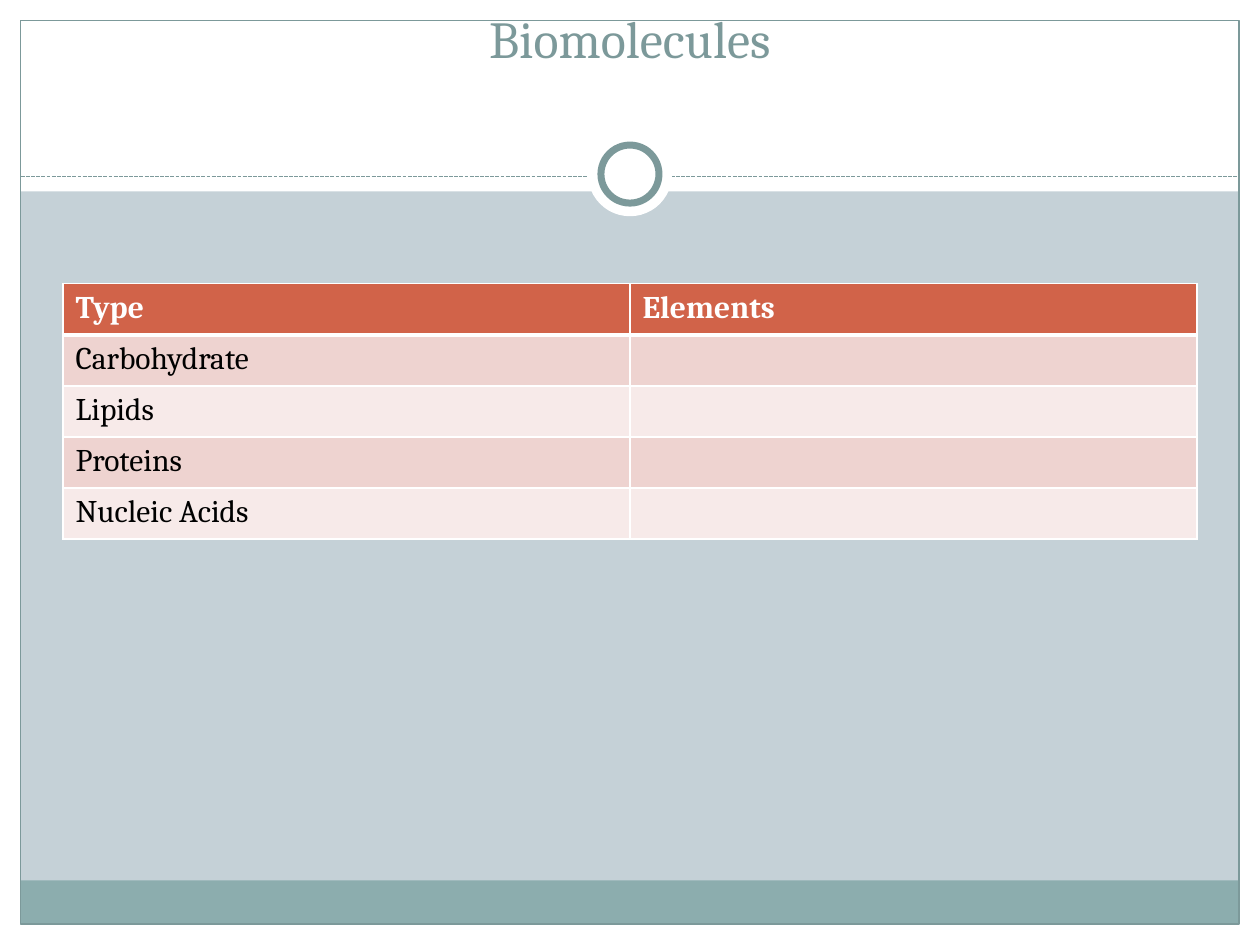
from lxml import etree
from pptx import Presentation
from pptx import util as u
from pptx.dml.color import RGBColor
from pptx.enum import dml, shapes, text
from pptx.oxml.ns import qn

WIDTH, HEIGHT = 25.4, 19.05
MARGIN = 0.42
HEADER_HEIGHT = 3.86
RULE_Y = 3.56
WHITE, TEAL, ACCENT = "FFFFFF", "7C999A", "D16349"
BANDS = ("EED3D0", "F7EAE9")
ROWS = [
    ("Type", "Elements"),
    ("Carbohydrate", ""),
    ("Lipids", ""),
    ("Proteins", ""),
    ("Nucleic Acids", ""),
]


def color(value):
    return RGBColor.from_string(value)


class SlideBuilder:
    font_name = "Cambria"
    title_size = 29.7
    table_size = 18

    def __init__(self, slide):
        self.slide = slide

    def background(self, fill):
        self.slide.background.fill.solid()
        self.slide.background.fill.fore_color.rgb = color(fill)

    def shape(self, kind, left, top, width, height, fill=None, line=None, weight=0.75):
        box = self.slide.shapes.add_shape(
            kind, u.Cm(left), u.Cm(top), u.Cm(width), u.Cm(height))
        box.shadow.inherit = False
        if fill:
            box.fill.solid()
            box.fill.fore_color.rgb = color(fill)
        else:
            box.fill.background()
        if line:
            box.line.color.rgb = color(line)
            box.line.width = u.Pt(weight)
        else:
            box.line.fill.background()
        return box

    def rectangle(self, *place, **style):
        return self.shape(shapes.MSO_SHAPE.RECTANGLE, *place, **style)

    def circle(self, center_x, center_y, diameter, **style):
        return self.shape(
            shapes.MSO_SHAPE.OVAL, center_x - diameter / 2, center_y - diameter / 2,
            diameter, diameter, **style)

    def dashed_rule(self, left, right, y):
        rule = self.slide.shapes.add_connector(
            shapes.MSO_CONNECTOR.STRAIGHT, u.Cm(left), u.Cm(y), u.Cm(right), u.Cm(y))
        rule.line.color.rgb = color(TEAL)
        rule.line.width = u.Pt(0.75)
        rule.line.dash_style = dml.MSO_LINE.SQUARE_DOT
        etree.SubElement(rule.element.spPr, qn("a:effectLst"))

    def style(self, paragraph, size, fill, bold=False):
        font = paragraph.font
        font.name, font.size, font.bold = self.font_name, u.Pt(size), bold
        font.color.rgb = color(fill)

    def title(self, words, left, top, width, height):
        title = self.slide.shapes.title
        title.left, title.top = u.Cm(left), u.Cm(top)
        title.width, title.height = u.Cm(width), u.Cm(height)
        frame = title.text_frame
        frame.text = words
        frame.word_wrap = True
        frame.auto_size = text.MSO_AUTO_SIZE.NONE
        frame.vertical_anchor = text.MSO_ANCHOR.BOTTOM
        frame.margin_bottom = u.Cm(1.35)
        para = frame.paragraphs[0]
        para.alignment = text.PP_ALIGN.CENTER
        self.style(para, self.title_size, TEAL)
        # Bring the title in front of the white header band.
        title.element.getparent().append(title.element)

    def border(self, cell, **weights):
        """Draw white cell borders; weights are points by side: L, R, T, B."""
        properties = cell._tc.get_or_add_tcPr()
        for side, weight in weights.items():
            line = etree.SubElement(
                properties, qn(f"a:ln{side}"), w=str(u.Pt(weight)))
            fill = etree.SubElement(line, qn("a:solidFill"))
            etree.SubElement(fill, qn("a:srgbClr"), val=WHITE)

    def table(self, rows, left, top, width, row_height):
        table = self.slide.shapes.add_table(
            len(rows), len(rows[0]), u.Cm(left), u.Cm(top),
            u.Cm(width), u.Cm(row_height * len(rows))).table
        for r, row in enumerate(rows):
            header = r == 0
            for c, words in enumerate(row):
                cell = table.cell(r, c)
                self.border(cell, L=1, R=1, T=3 if r == 1 else 1, B=3 if header else 1)
                cell.fill.solid()
                cell.fill.fore_color.rgb = color(ACCENT if header else BANDS[(r - 1) % 2])
                cell.text = words
                self.style(cell.text_frame.paragraphs[0], self.table_size,
                           WHITE if header else "000000", bold=header)


def main():
    deck = Presentation()
    deck.slide_width, deck.slide_height = u.Cm(WIDTH), u.Cm(HEIGHT)
    page = SlideBuilder(deck.slides.add_slide(deck.slide_layouts[5]))
    page.background("C5D1D7")

    inner_width, inner_height = WIDTH - 2 * MARGIN, HEIGHT - 2 * MARGIN
    for place in (
        (0, HEIGHT - MARGIN, WIDTH, MARGIN),
        (0, 0, WIDTH, HEADER_HEIGHT),
        (0, 0, MARGIN, HEIGHT),
        (WIDTH - MARGIN, 0, MARGIN, HEIGHT),
    ):
        page.rectangle(*place, fill=WHITE)
    page.rectangle(MARGIN, 17.75, inner_width, 0.87, fill="8CADAE")
    page.rectangle(MARGIN, MARGIN, inner_width, inner_height, line=TEAL)

    page.dashed_rule(MARGIN, WIDTH - MARGIN, RULE_Y)
    page.circle(WIDTH / 2, 3.51, 1.7, fill=WHITE)
    page.circle(WIDTH / 2, 3.51, 1.17, fill=WHITE, line=TEAL, weight=4)

    page.title("Biomolecules", 0.85, 0.64, 23.7, 2.1)
    page.table(ROWS, 1.27, 5.72, 22.86, 1.03)
    deck.save("out.pptx")


if __name__ == "__main__":
    main()
